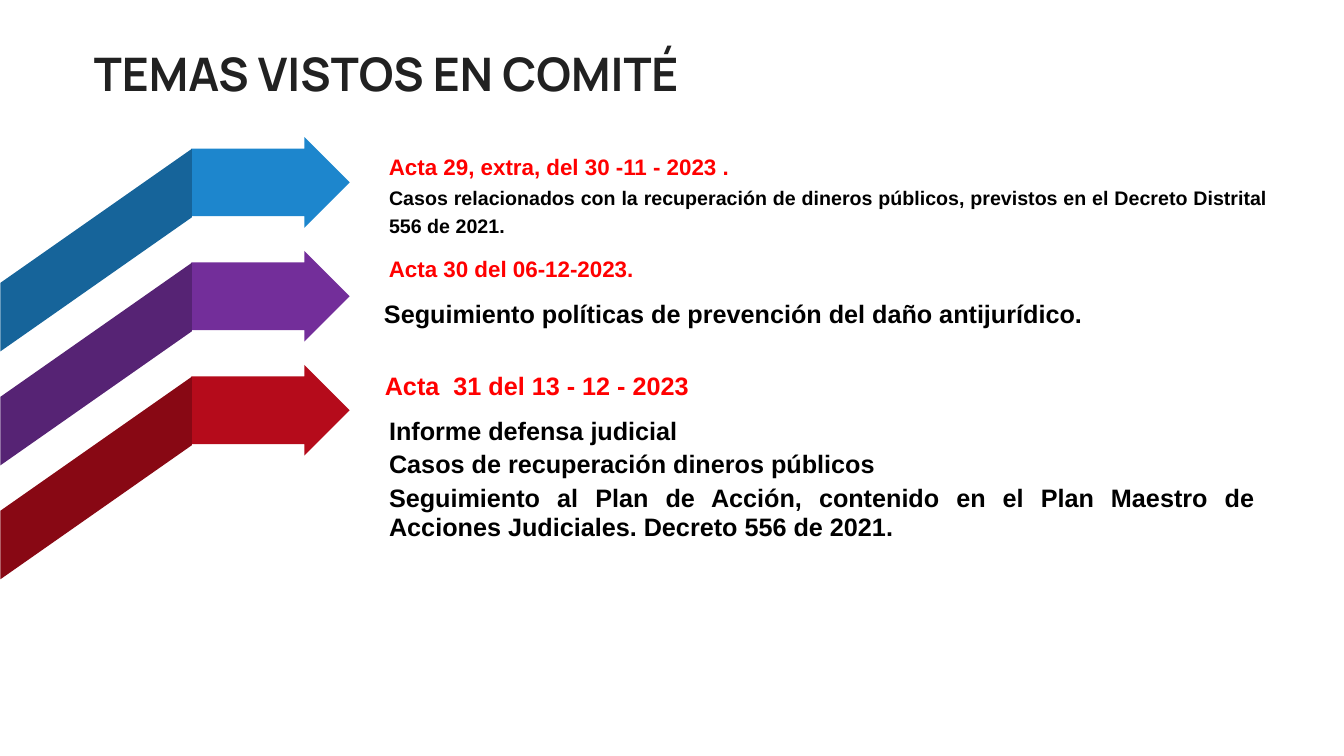
from lxml.etree import SubElement
from pptx import Presentation
from pptx.dml.color import RGBColor
from pptx.enum.shapes import MSO_SHAPE
from pptx.enum.text import MSO_ANCHOR, MSO_AUTO_SIZE, PP_ALIGN
from pptx.oxml.ns import qn
from pptx.util import Pt

TITLE_GRAY = RGBColor(0x21, 0x21, 0x21)
RED = RGBColor(0xFF, 0x00, 0x00)
BLACK = RGBColor(0x00, 0x00, 0x00)

# Arrow colour and ribbon colour, from top to bottom
BAND_COLORS = [
    (RGBColor(0x1D, 0x86, 0xCD), RGBColor(0x16, 0x64, 0x9A)),
    (RGBColor(0x73, 0x2E, 0x9A), RGBColor(0x56, 0x23, 0x74)),
    (RGBColor(0xB5, 0x0B, 0x1B), RGBColor(0x88, 0x08, 0x14)),
]
BAND_STEP = 81.4

# Text, left, top, width, height, size
HEADINGS = [
    ("Acta 29, extra, del 30 -11 - 2023 .", 270.7, 105.8, 264.2, 26.6, 16),
    ("Acta 30 del 06-12-2023.", 270.7, 178.6, 191.5, 26.6, 16),
    ("Acta  31 del 13 - 12 - 2023", 267.8, 260.6, 242, 29, 18),
]
DETAILS = [
    ("Casos relacionados con la recuperación de dineros públicos, previstos "
     "en el Decreto Distrital 556 de 2021.", 274.3, 126.7, 635, 46.1, 14),
    ("Seguimiento políticas de prevención del daño antijurídico.",
     270.7, 211.7, 638.6, 25.2, 18),
]
TOPICS = [
    "Informe defensa judicial",
    "Casos de recuperación dineros públicos",
    "Seguimiento al Plan de Acción, contenido en el Plan Maestro de "
    "Acciones Judiciales. Decreto 556 de 2021.",
]


def place(shape, left, top, width, height):
    shape.left, shape.top = Pt(left), Pt(top)
    shape.width, shape.height = Pt(width), Pt(height)


def set_font(paragraph, name, size, color):
    paragraph.font.name = name
    paragraph.font.size = Pt(size)
    paragraph.font.bold = True
    paragraph.font.color.rgb = color


def format_details(frame, size):
    """Justified black text with narrow margins and fixed line spacing."""
    frame.word_wrap = True
    frame.auto_size = MSO_AUTO_SIZE.NONE
    frame.vertical_anchor = MSO_ANCHOR.TOP
    frame.margin_left = frame.margin_right = Pt(3.6)
    frame.margin_top = frame.margin_bottom = Pt(2.2)
    for paragraph in frame.paragraphs:
        paragraph.alignment = PP_ALIGN.JUSTIFY
        paragraph.line_spacing = Pt(20.5)
        paragraph.space_before = Pt(size * 0.2)
        set_font(paragraph, "Arial", size, BLACK)


def add_band_part(slide, preset, box, color, adjustments):
    shape = slide.shapes.add_shape(preset, *(Pt(length) for length in box))
    shape.shadow.inherit = False
    shape.fill.solid()
    shape.fill.fore_color.rgb = color
    shape.line.fill.background()
    for index, value in enumerate(adjustments):
        shape.adjustments[index] = value
    return shape


def add_band(slide, offset, arrow_color, ribbon_color):
    add_band_part(slide, MSO_SHAPE.RIGHT_ARROW, (136.8, 97.9 + offset, 113, 64.8),
                  arrow_color, (0.746, 0.5))
    ribbon = add_band_part(slide, MSO_SHAPE.PARALLELOGRAM,
                           (-3.6, 110.2 + offset, 144.7, 136.8),
                           ribbon_color, (0.7,))
    ribbon.rotation = 270
    ribbon._element.spPr.find(qn("a:xfrm")).set("flipH", "1")


def add_text(slide, text, left, top, width, height):
    box = slide.shapes.add_textbox(Pt(left), Pt(top), Pt(width), Pt(height))
    box.text_frame.word_wrap = True
    box.text_frame.text = text
    return box.text_frame


def add_heading(slide, text, left, top, width, height, size):
    frame = add_text(slide, text, left, top, width, height)
    frame.vertical_anchor = MSO_ANCHOR.BOTTOM
    set_font(frame.paragraphs[0], "Arial", size, RED)


def add_details(slide, text, left, top, width, height, size):
    format_details(add_text(slide, text, left, top, width, height), size)


def fill_title(title):
    place(title, 59.8, 18.7, 438.5, 54.7)
    frame = title.text_frame
    frame.text = "TEMAS VISTOS EN COMITÉ"
    frame.word_wrap = False
    frame.auto_size = MSO_AUTO_SIZE.NONE
    frame.vertical_anchor = MSO_ANCHOR.TOP
    paragraph = frame.paragraphs[0]
    paragraph.alignment = PP_ALIGN.LEFT
    paragraph.line_spacing = Pt(50)
    set_font(paragraph, "Manrope", 33, TITLE_GRAY)


def fill_topics(body):
    place(body, 274.3, 295.2, 625.7, 122.4)
    body.text_frame.text = "\n".join(TOPICS)
    format_details(body.text_frame, 18)
    # Plain lines without bullets or indent
    for paragraph in body.text_frame.paragraphs:
        properties = paragraph._p.get_or_add_pPr()
        properties.set("marL", "0")
        properties.set("indent", "0")
        SubElement(properties, qn("a:buNone"))


def main():
    presentation = Presentation()
    presentation.slide_width, presentation.slide_height = Pt(960), Pt(540)
    slide = presentation.slides.add_slide(presentation.slide_layouts[1])

    # Title and topic list
    fill_title(slide.shapes.title)
    fill_topics(slide.placeholders[1])

    # Folded arrows
    for row, colors in enumerate(BAND_COLORS):
        add_band(slide, row * BAND_STEP, *colors)

    # Minutes and their details
    for heading in HEADINGS:
        add_heading(slide, *heading)
    for details in DETAILS:
        add_details(slide, *details)

    presentation.save("out.pptx")


if __name__ == "__main__":
    main()
